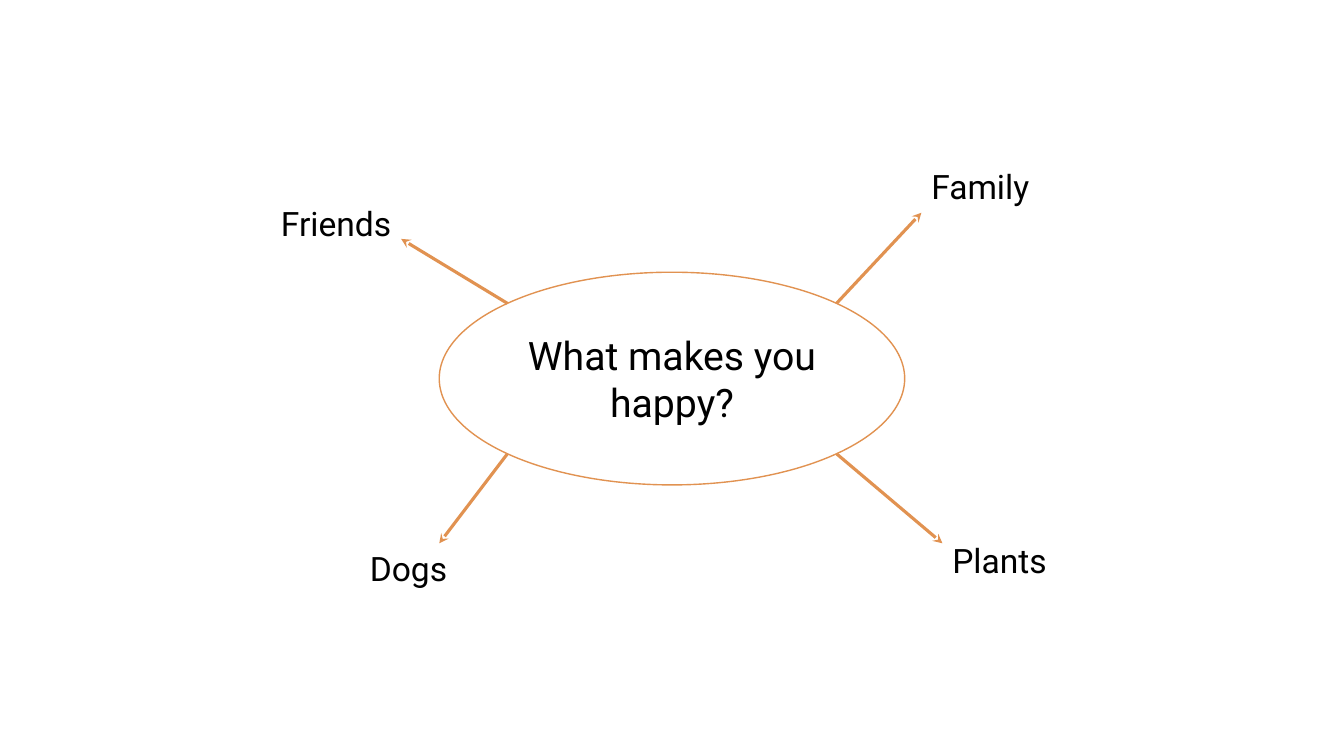
import math
import pptx
import pptx.util
import pptx.dml.color
import pptx.enum.shapes
import pptx.enum.text
import pptx.oxml.ns
from lxml import etree
from pptx.util import Cm, Pt

ORANGE = "E19251"
BLACK = "000000"


def color(text):
    return pptx.dml.color.RGBColor.from_string(text)


def write(shape, text, size, align):
    para = shape.text_frame.paragraphs[0]
    para.text = text
    para.alignment = align
    para.font.name = "Roboto"
    para.font.size = Pt(size)
    para.font.color.rgb = color(BLACK)


deck = pptx.Presentation()
deck.slide_width = Cm(33.87)
deck.slide_height = Cm(19.05)
slide = deck.slides.add_slide(deck.slide_layouts[6])
shapes = slide.shapes
align = pptx.enum.text.PP_ALIGN

# Central question
left, top, width, height = 11.07, 6.86, 11.73, 5.36
oval = shapes.add_shape(pptx.enum.shapes.MSO_SHAPE.OVAL,
                        Cm(left), Cm(top), Cm(width), Cm(height))
oval.shadow.inherit = False
oval.fill.background()
oval.line.color.rgb = color(ORANGE)
oval.line.width = Pt(1)
oval.text_frame.word_wrap = True
oval.text_frame.vertical_anchor = pptx.enum.text.MSO_ANCHOR.MIDDLE
write(oval, "What makes you happy?", 28, align.CENTER)

# Answers: side of the oval, arrow tip, label corner
answers = [
    ("Friends", -1, -1, 10.11, 6.02, 6.83, 5.0),
    ("Family", 1, -1, 23.22, 5.36, 23.22, 4.06),
    ("Plants", 1, 1, 23.75, 13.69, 23.75, 13.49),
    ("Dogs", -1, 1, 11.07, 13.69, 9.07, 13.69),
]
half = math.sqrt(0.5) / 2
for name, across, down, tip_x, tip_y, x, y in answers:
    # Arrow from the oval's diagonal point
    arrow = shapes.add_connector(
        pptx.enum.shapes.MSO_CONNECTOR.STRAIGHT,
        Cm(left + width * (0.5 + across * half)),
        Cm(top + height * (0.5 + down * half)),
        Cm(tip_x), Cm(tip_y))
    arrow.line.color.rgb = color(ORANGE)
    arrow.line.width = Pt(2.25)
    qn = pptx.oxml.ns.qn
    etree.SubElement(arrow.line._get_or_add_ln(), qn("a:tailEnd"), type="stealth")
    etree.SubElement(arrow._element.spPr, qn("a:effectLst"))

    # Label
    label = shapes.add_textbox(Cm(x), Cm(y), Cm(4.78), Cm(1.27))
    label.text_frame.word_wrap = True
    label.text_frame.auto_size = pptx.enum.text.MSO_AUTO_SIZE.SHAPE_TO_FIT_TEXT
    write(label, name, 24, align.LEFT)

deck.save("out.pptx")
